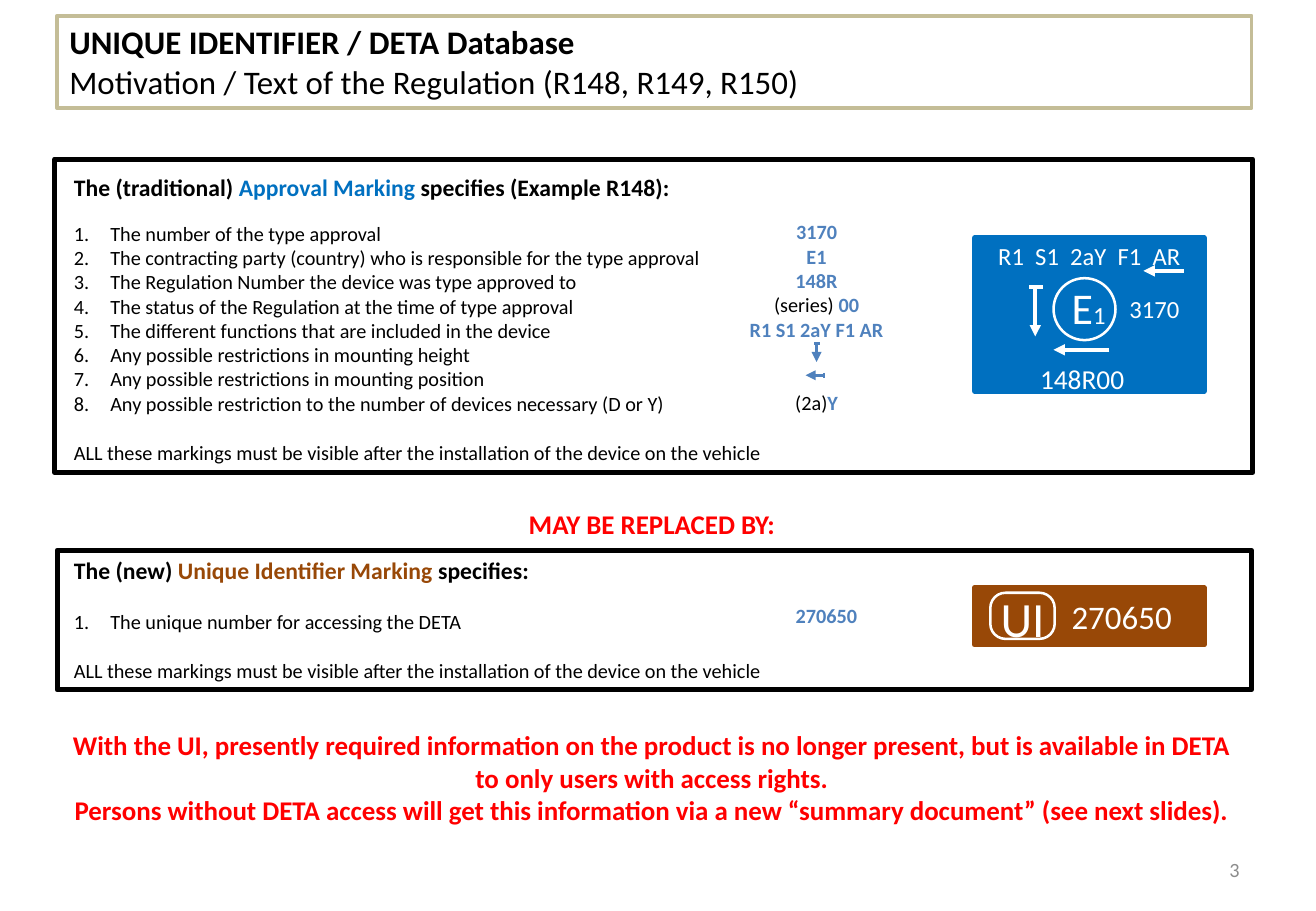
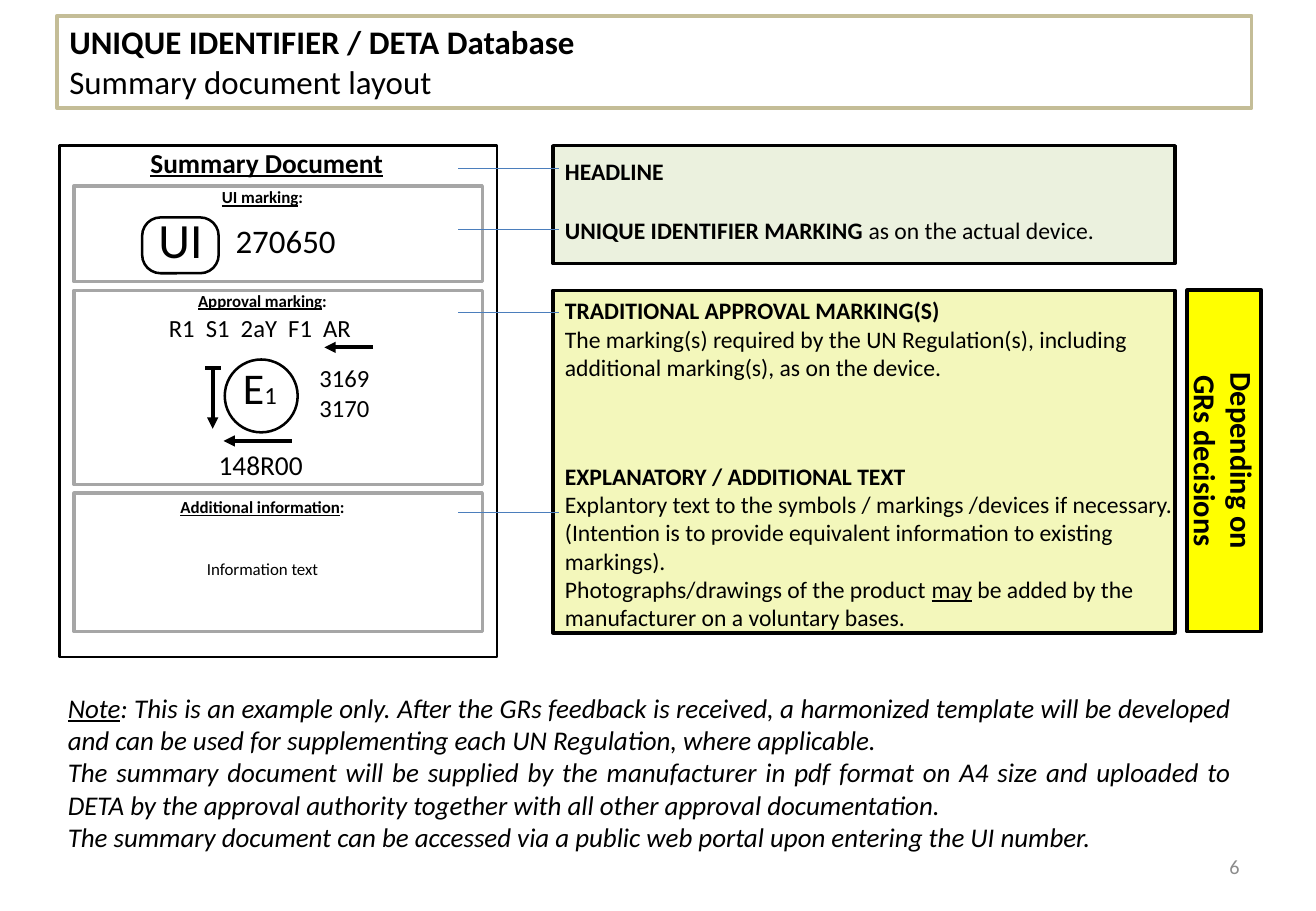
from dataclasses import dataclass
from typing import Optional

from lxml.etree import SubElement
from pptx import Presentation
from pptx.dml.color import RGBColor
from pptx.enum.shapes import MSO_CONNECTOR, MSO_SHAPE
from pptx.enum.text import MSO_ANCHOR, MSO_AUTO_SIZE, PP_ALIGN
from pptx.oxml.ns import qn
from pptx.util import Inches, Pt

FONT = "Calibri"
BLACK = RGBColor(0x00, 0x00, 0x00)
WHITE = RGBColor(0xFF, 0xFF, 0xFF)
RED = RGBColor(0xFF, 0x00, 0x00)
BLUE = RGBColor(0x00, 0x70, 0xC0)
VALUE_BLUE = RGBColor(0x4F, 0x81, 0xBD)
LINK_BLUE = RGBColor(0x4B, 0x7E, 0xBC)
BROWN = RGBColor(0x98, 0x48, 0x07)
TAN = RGBColor(0xC4, 0xBD, 0x97)
GREY = RGBColor(0xA6, 0xA6, 0xA6)
NUMBER_GREY = RGBColor(0x8C, 0x8C, 0x8C)
PALE_GREEN = RGBColor(0xEB, 0xF1, 0xDE)
PALE_YELLOW = RGBColor(0xF3, 0xF7, 0xBB)
YELLOW = RGBColor(0xFF, 0xFF, 0x00)

CENTER = PP_ALIGN.CENTER
VISIBLE = "ALL these markings must be visible after the installation of the device on the vehicle"


@dataclass
class Run:
    """A piece of text; None takes the value given for the whole box."""
    text: str
    size: Optional[float] = None
    bold: Optional[bool] = None
    colour: Optional[RGBColor] = None
    underline: bool = False


@dataclass
class Para:
    runs: list
    before: float = 0
    numbered: bool = False
    spacing: Optional[float] = None


def number_paragraph(paragraph):
    properties = paragraph._p.get_or_add_pPr()
    properties.set("marL", str(Inches(0.3)))
    properties.set("indent", str(-Inches(0.3)))
    SubElement(properties, qn("a:buFont"), typeface="+mj-lt")
    SubElement(properties, qn("a:buAutoNum"), type="arabicPeriod")


def write(frame, items, size, colour=BLACK, bold=False, italic=False, align=PP_ALIGN.LEFT):
    """Fill a text frame; each item is a Para or a plain string."""
    frame.word_wrap = True
    for index, item in enumerate(items):
        para = Para([Run(item)]) if isinstance(item, str) else item
        paragraph = frame.paragraphs[0] if index == 0 else frame.add_paragraph()
        if para.numbered:
            number_paragraph(paragraph)
        paragraph.alignment = align
        if para.before:
            paragraph.space_before = Pt(para.before)
        if para.spacing:
            paragraph.line_spacing = Pt(para.spacing)
        for part in para.runs:
            run = paragraph.add_run()
            run.text = part.text
            font = run.font
            font.name = FONT
            font.size = Pt(part.size or size)
            font.bold = bold if part.bold is None else part.bold
            font.italic = italic
            font.underline = part.underline
            font.color.rgb = part.colour or colour


def add_text(slide, box, items, size, **style):
    shape = slide.shapes.add_textbox(*map(Inches, box))
    write(shape.text_frame, items, size, **style)
    return shape


def add_box(slide, box, line, width, fill=None, kind=MSO_SHAPE.RECTANGLE):
    shape = slide.shapes.add_shape(kind, *map(Inches, box))
    shape.shadow.inherit = False
    if fill is None:
        shape.fill.background()
    else:
        shape.fill.solid()
        shape.fill.fore_color.rgb = fill
    shape.line.color.rgb = line
    shape.line.width = Pt(width)
    return shape


def add_line(slide, ends, colour, width, arrow=False):
    """Draw a straight line over (x1, y1, x2, y2), with an optional head at its end."""
    connector = slide.shapes.add_connector(MSO_CONNECTOR.STRAIGHT, *map(Inches, ends))
    connector.line.color.rgb = colour
    connector.line.width = Pt(width)
    properties = connector.element.spPr
    if arrow:
        SubElement(properties.find(qn("a:ln")), qn("a:tailEnd"), type="triangle")
    SubElement(properties, qn("a:effectLst"))


def add_slide(presentation, subtitle, number, number_top):
    slide = presentation.slides.add_slide(presentation.slide_layouts[5])
    title = slide.shapes.title
    title.left, title.top, title.width, title.height = map(Inches, (0.47, 0.13, 9.83, 0.76))
    title.line.color.rgb = TAN
    title.line.width = Pt(2.25)
    frame = title.text_frame
    frame.auto_size = MSO_AUTO_SIZE.NONE
    frame.vertical_anchor = MSO_ANCHOR.TOP
    write(frame, [Para([Run("UNIQUE IDENTIFIER / DETA Database", bold=True)]), subtitle], 19.5)
    page = add_text(slide, (7.8, number_top, 2.5, 0.35), [number], 12,
                    colour=NUMBER_GREY, align=PP_ALIGN.RIGHT)
    page.text_frame.vertical_anchor = MSO_ANCHOR.MIDDLE
    return slide


def add_ui_marking(slide, badge, letters, number, ink, fill):
    """Rounded UI badge followed by the unique number."""
    frame = add_box(slide, badge, ink, 1.5, fill, MSO_SHAPE.ROUNDED_RECTANGLE)
    frame.adjustments[0] = 0.33
    add_text(slide, letters, ["UI"], 29.2, colour=ink, align=CENTER)
    add_text(slide, number, ["270650"], 19.5, colour=ink)


def add_approval_marking(slide, ink, codes, circle, country, regulation,
                         approvals, approval_numbers, arrows, bar):
    """Function codes, circled country, approval numbers and direction arrows."""
    add_text(slide, codes, ["R1  S1  2aY  F1  AR"], 14.6, colour=ink, align=CENTER)
    add_box(slide, circle, ink, 1.5, kind=MSO_SHAPE.OVAL)
    add_text(slide, country, [Para([Run("E", 26), Run("1")])], 14.6, colour=ink)
    add_text(slide, regulation, [Para([Run("148R00")], spacing=24.4)], 16.2,
             colour=ink, align=CENTER)
    add_text(slide, approvals, approval_numbers, 14.6, colour=ink, align=CENTER)
    for ends in arrows:
        add_line(slide, ends, ink, 2.25, arrow=True)
    add_line(slide, bar, ink, 2.25)


def heading(before, name, colour, after):
    return Para([Run(text, 14, True, shade) for text, shade in
                 ((before, None), (name, colour), (after, None))])


def build_motivation(presentation):
    slide = add_slide(presentation, "Motivation / Text of the Regulation (R148, R149, R150)",
                      "3", 6.98)
    specified = [
        "The number of the type approval",
        "The contracting party (country) who is responsible for the type approval",
        "The Regulation Number the device was type approved to",
        "The status of the Regulation at the time of type approval",
        "The different functions that are included in the device",
        "Any possible restrictions in mounting height",
        "Any possible restrictions in mounting position",
        "Any possible restriction to the number of devices necessary (D or Y)",
    ]
    add_box(slide, (0.45, 1.31, 9.86, 2.58), BLACK, 3)
    add_text(slide, (0.51, 1.37, 7, 2.52), [
        heading("The (traditional) ", "Approval Marking ", BLUE, "specifies (Example R148):"),
        *(Para([Run(text)], before=0 if index else 12, numbered=True)
          for index, text in enumerate(specified)),
        Para([Run(VISIBLE)], before=14.6),
    ], 12)
    plain = {"bold": False, "colour": BLACK}
    add_text(slide, (6.01, 1.76, 1.42, 1.72), [
        "3170", "E1", "148R",
        Para([Run("(series)", **plain), Run(" 00")]),
        "R1 S1 2aY F1 AR",
        Para([Run("(2a)", **plain), Run("Y")], before=29.3),
    ], 12, colour=VALUE_BLUE, bold=True, align=CENTER)
    for arrow, bar in (((6.72, 2.83, 6.72, 2.98), (6.7, 2.83, 6.75, 2.83)),
                       ((6.77, 3.09, 6.63, 3.09), (6.78, 3.07, 6.78, 3.11))):
        add_line(slide, arrow, VALUE_BLUE, 1.5, arrow=True)
        add_line(slide, bar, VALUE_BLUE, 1.5)

    add_box(slide, (8.02, 1.96, 1.89, 1.26), BLUE, 3, BLUE)
    add_approval_marking(
        slide, WHITE, codes=(8.02, 1.93, 1.89, 0.35), circle=(8.67, 2.29, 0.51, 0.51),
        country=(8.72, 2.26, 0.51, 0.54), regulation=(8.45, 2.86, 0.91, 0.41),
        approvals=(9.1, 2.37, 0.8, 0.35), approval_numbers=["3170"],
        arrows=[(8.52, 2.35, 8.52, 2.77), (9.74, 2.23, 9.41, 2.23), (9.13, 2.88, 8.67, 2.88)],
        bar=(8.47, 2.36, 8.58, 2.36))

    add_text(slide, (0.45, 4.13, 9.83, 0.37), ["MAY BE REPLACED BY:"], 16,
             colour=RED, bold=True, align=CENTER)

    add_box(slide, (0.47, 4.53, 9.83, 1.15), BLACK, 3)
    add_text(slide, (0.51, 4.53, 7, 1.14), [
        heading("The (new) ", "Unique Identifier Marking ", BROWN, "specifies:"),
        Para([Run("The unique number for accessing the DETA")], before=14.6, numbered=True),
        Para([Run(VISIBLE)], before=14.6),
    ], 12)
    add_text(slide, (6.09, 4.92, 1.42, 0.3), ["270650"], 12,
             colour=VALUE_BLUE, bold=True, align=CENTER)
    add_box(slide, (8.02, 4.84, 1.89, 0.47), BROWN, 3, BROWN)
    add_ui_marking(slide, (8.15, 4.88, 0.53, 0.38), (8.09, 4.79, 0.65, 0.59),
                   (8.72, 4.86, 1.18, 0.43), WHITE, BROWN)

    add_text(slide, (0.45, 5.95, 9.83, 0.91), [
        "With the UI, presently required information on the product is no longer present, "
        "but is available in DETA to only users with access rights.",
        "Persons without DETA access will get this information via a new "
        "“summary document” (see next slides).",
    ], 16, colour=RED, bold=True, align=CENTER)


def build_layout(presentation):
    slide = add_slide(presentation, "Summary document layout", "6", 6.96)

    add_box(slide, (0.49, 1.2, 3.6, 4.21), BLACK, 1.5)
    add_text(slide, (0.93, 1.15, 2.53, 0.45), [Para([Run("Summary Document", underline=True)])],
             16.2, bold=True, align=CENTER)
    information = Para([Run("Information text", bold=False)], before=24.4)
    for top, height, label_top, label, extra in (
            (1.53, 0.79, 1.49, "UI marking", []),
            (2.39, 1.6, 2.34, "Approval marking", []),
            (4.06, 1.14, 4.04, "Additional information", [information])):
        add_box(slide, (0.61, top, 3.36, height), GREY, 2)
        add_text(slide, (1.21, label_top, 1.9, 0.27),
                 [Para([Run(label, underline=True), Run(":")]), *extra],
                 10, bold=True, align=CENTER)
    add_ui_marking(slide, (1.17, 1.79, 0.63, 0.46), (1.1, 1.67, 0.77, 0.71),
                   (1.84, 1.77, 1.4, 0.51), BLACK, WHITE)
    add_approval_marking(
        slide, BLACK, codes=(1.02, 2.53, 2.24, 0.41), circle=(1.85, 2.96, 0.6, 0.6),
        country=(1.9, 2.92, 0.6, 0.64), regulation=(1.6, 3.57, 1.09, 0.49),
        approvals=(2.47, 2.94, 0.73, 0.71), approval_numbers=["3169", "3170"],
        arrows=[(1.75, 3.04, 1.75, 3.53), (3.07, 2.86, 2.67, 2.86), (2.4, 3.63, 1.84, 3.63)],
        bar=(1.69, 3.03, 1.82, 3.03))

    add_box(slide, (4.55, 1.2, 5.12, 0.97), BLACK, 2, PALE_GREEN)
    add_box(slide, (4.55, 2.39, 5.12, 2.82), BLACK, 2, PALE_YELLOW)
    for top, height, title, rest, details in (
            (1.24, 0.34, "HEADLINE", "", []),
            (1.73, 0.34, "UNIQUE IDENTIFIER MARKING", " as on the actual device.", []),
            (2.39, 0.81, "TRADITIONAL APPROVAL MARKING(S)", "", [
                "The marking(s) required by the UN Regulation(s), including",
                "additional marking(s), as on the device."]),
            (3.75, 1.51, "EXPLANATORY / ADDITIONAL TEXT", "", [
                "Explantory text to the symbols / markings /devices if necessary. "
                "(Intention is to provide equivalent information to existing",
                "markings).",
                Para([Run("Photographs/drawings of the product "), Run("may", underline=True),
                      Run(" be added by the manufacturer on a voluntary bases.")])])):
        first = [Run(title, bold=True)] + ([Run(rest)] if rest else [])
        add_text(slide, (4.55, top, 5.75, height), [Para(first), *details], 14)
    for y in (1.39, 1.89, 2.57, 4.22):
        add_line(slide, (4.6, y, 3.77, y), LINK_BLUE, 0.75)

    decision = add_box(slide, (8.67, 3.49, 2.81, 0.61), BLACK, 2.25, YELLOW)
    decision.rotation = 90
    frame = decision.text_frame
    frame.margin_top = frame.margin_bottom = 0
    frame.vertical_anchor = MSO_ANCHOR.MIDDLE
    write(frame, ["Depending on", "GRs decisions"], 18, bold=True, align=CENTER)

    add_text(slide, (0.46, 5.64, 9.77, 1.45), [
        Para([Run("Note", underline=True),
              Run(": This is an example only. After the GRs feedback is received, a harmonized "
                  "template will be developed and can be used for supplementing each "
                  "UN Regulation, where applicable.")]),
        "The summary document will be supplied by the manufacturer in pdf format on A4 size and "
        "uploaded to DETA by the approval authority together with all other approval "
        "documentation.",
        "The summary document can be accessed via a public web portal upon entering the UI number.",
    ], 16, italic=True, align=PP_ALIGN.JUSTIFY)


def main():
    presentation = Presentation()
    presentation.slide_width = Inches(10.83)
    presentation.slide_height = Inches(7.5)
    build_motivation(presentation)
    build_layout(presentation)
    presentation.save("out.pptx")


if __name__ == "__main__":
    main()
